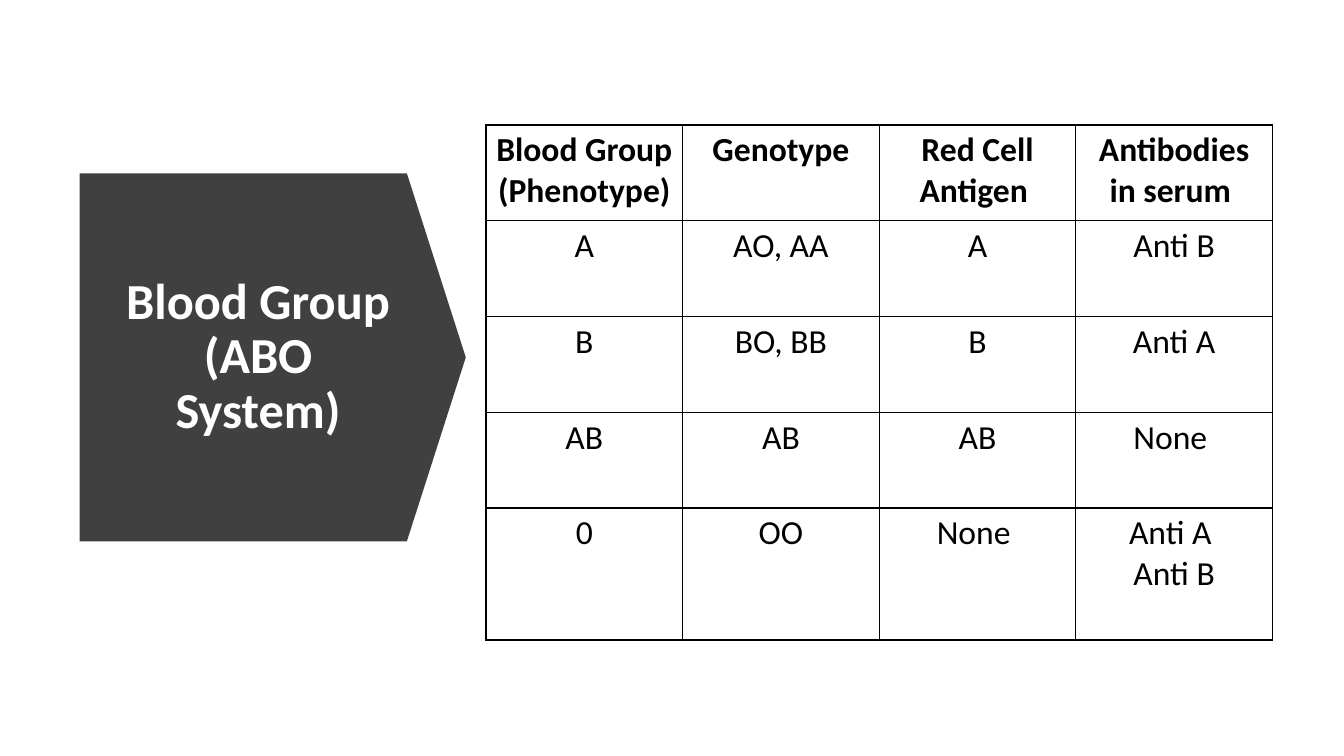
from typing import Any, NamedTuple

from lxml import etree
from pptx import Presentation
from pptx.dml.color import RGBColor
from pptx.enum.shapes import MSO_SHAPE
from pptx.enum.text import MSO_ANCHOR, PP_ALIGN
from pptx.oxml.ns import qn
from pptx.util import Inches, Pt

DOWN_ARROW = MSO_SHAPE.DOWN_ARROW
MIDDLE = MSO_ANCHOR.MIDDLE
CENTER = PP_ALIGN.CENTER

BLACK = RGBColor(0x00, 0x00, 0x00)
WHITE = RGBColor(0xFF, 0xFF, 0xFF)
CHARCOAL = RGBColor(0x40, 0x40, 0x40)

TITLE_FORMAT = {"name": "Calibri", "size": Pt(36), "bold": True}
HEADING_FORMAT = {"name": "Calibri", "size": Pt(24), "bold": True}
ENTRY_FORMAT = {**HEADING_FORMAT, "bold": False}

COLUMN_WIDTH = Inches(1.95)
ROW_HEIGHT = Inches(0.95)
LAST_ROW_HEIGHT = Inches(1.31)


class BloodGroup(NamedTuple):
    phenotype: str
    genotype: str
    antigen: str
    antibodies: str


HEADINGS = BloodGroup("Blood Group (Phenotype)", "Genotype",
                      "Red Cell Antigen ", "Antibodies in serum ")
BLOOD_GROUPS = [
    BloodGroup("A", "AO, AA", "A", "Anti B"),
    BloodGroup("B", "BO, BB", "B", "Anti A"),
    BloodGroup("AB", "AB", "AB", "None "),
    BloodGroup("0", "OO", "None ", "Anti A \nAnti B"),
]


def write_text(frame: Any, text: str, font_format: dict[str, Any],
               color: RGBColor, line_spacing: float = 1.0) -> None:
    frame.word_wrap = True
    frame.text = text
    for paragraph in frame.paragraphs:
        paragraph.alignment = CENTER
        paragraph.line_spacing = line_spacing
        for attribute, value in font_format.items():
            setattr(paragraph.font, attribute, value)
        paragraph.font.color.rgb = color


def draw_borders(cell: Any) -> None:
    properties = cell._tc.get_or_add_tcPr()
    for position, side in enumerate(("a:lnL", "a:lnR", "a:lnT", "a:lnB")):
        border = etree.Element(qn(side), w=str(Pt(1)))
        fill = etree.SubElement(border, qn("a:solidFill"))
        etree.SubElement(fill, qn("a:srgbClr"), val=str(BLACK))
        properties.insert(position, border)


def draw_title(slide: Any) -> None:
    # Arrow pointing right behind the title
    arrow = slide.shapes.add_shape(DOWN_ARROW, Inches(0.88), Inches(1.63),
                                   Inches(3.65), Inches(3.83))
    arrow.rotation = 270
    arrow.adjustments[0] = 1
    arrow.adjustments[1] = 0.16
    arrow.shadow.inherit = False
    arrow.fill.solid()
    arrow.fill.fore_color.rgb = CHARCOAL
    arrow.line.fill.background()

    title = slide.shapes.add_textbox(Inches(1.12), Inches(2.15),
                                     Inches(2.88), Inches(2.79))
    title.text_frame.vertical_anchor = MIDDLE
    write_text(title.text_frame, "Blood Group (ABO System)",
               TITLE_FORMAT, WHITE, 0.9)


def draw_blood_groups(slide: Any) -> None:
    rows = [HEADINGS, *BLOOD_GROUPS]
    columns = len(HEADINGS)
    table = slide.shapes.add_table(
        len(rows), columns, Inches(4.82), Inches(1.24),
        COLUMN_WIDTH * columns,
        ROW_HEIGHT * len(BLOOD_GROUPS) + LAST_ROW_HEIGHT).table
    for column in table.columns:
        column.width = COLUMN_WIDTH
    for row_index, group in enumerate(rows):
        is_last = row_index == len(rows) - 1
        table.rows[row_index].height = LAST_ROW_HEIGHT if is_last else ROW_HEIGHT
        font_format = ENTRY_FORMAT if row_index else HEADING_FORMAT
        for column_index, text in enumerate(group):
            cell = table.cell(row_index, column_index)
            cell.fill.background()
            draw_borders(cell)
            write_text(cell.text_frame, text, font_format, BLACK)


def main() -> None:
    presentation = Presentation()
    presentation.slide_width = Inches(13.33)
    presentation.slide_height = Inches(7.5)
    slide = presentation.slides.add_slide(presentation.slide_layouts[6])
    draw_title(slide)
    draw_blood_groups(slide)
    presentation.save("out.pptx")


if __name__ == "__main__":
    main()
